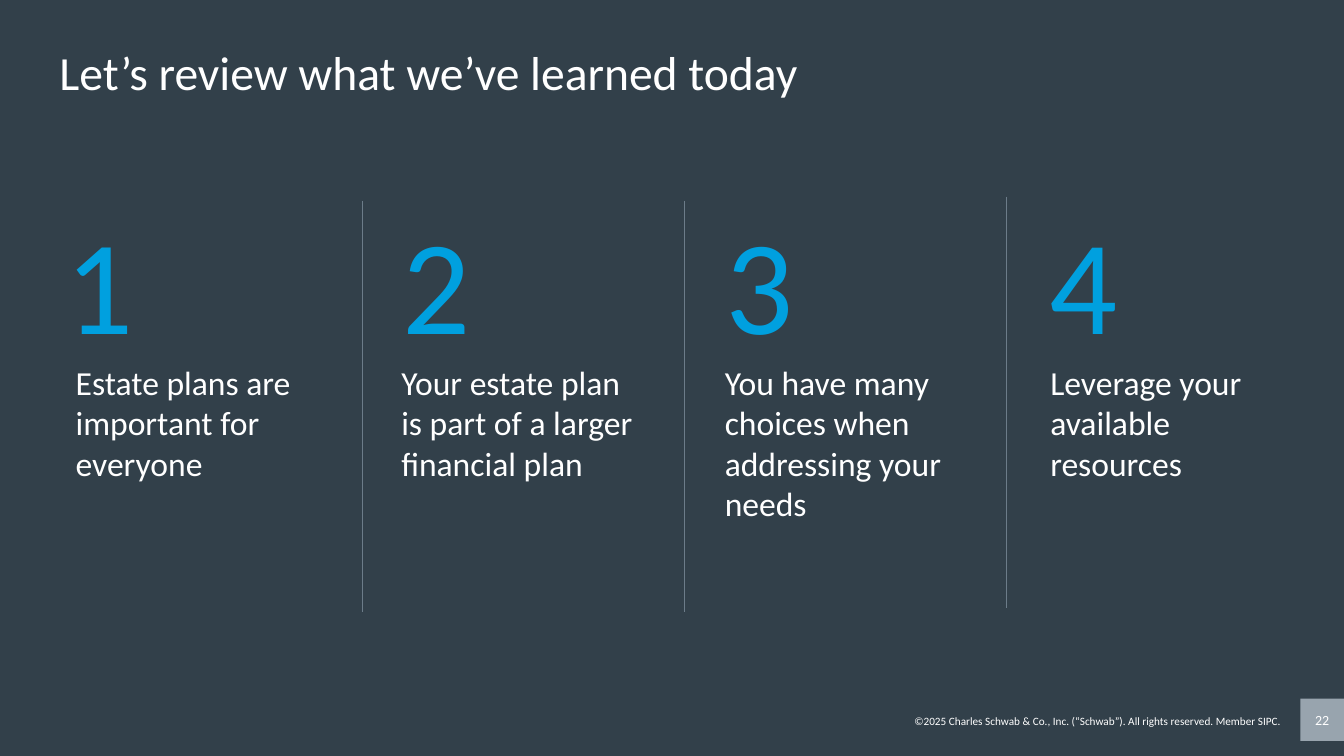
from dataclasses import dataclass

from lxml import etree
from pptx import Presentation
from pptx import util as u
from pptx.dml import color
from pptx.enum import shapes, text
from pptx.oxml import ns

Pt = u.Pt
ALIGN = text.PP_ALIGN


@dataclass(frozen=True)
class Theme:
    font: str = "Calibri"
    back: str = "32404A"
    white: str = "FFFFFF"
    blue: str = "00A0DF"
    rule: str = "6C7C89"
    tab: str = "98A4AE"
    title: int = 34
    digit: int = 96
    body: int = 24
    page: int = 10
    legal: int = 8


THEME = Theme()
POINTS = [
    (8.6, 54, "Estate plans are\vimportant for\veveryone"),
    (249.1, 286.6, "Your estate plan\vis part of a larger\vfinancial plan"),
    (479.5, 517.7, "You have many choices when addressing your needs"),
    (711.4, 750.2, "Leverage your\vavailable\vresources"),
]
RULES = [(258.5, 143.3), (488.9, 143.3), (718.6, 140.4)]


def rgb(code):
    return color.RGBColor.from_string(code)


def apply(item, values):
    for name, value in values.items():
        setattr(item, name, value)


def write(shape, words, size, tint=THEME.white, pad=(0, 0), mid=False, **style):
    frame = shape.text_frame
    apply(frame, {
        "word_wrap": True,
        "margin_left": Pt(pad[0]),
        "margin_right": Pt(pad[0]),
        "margin_top": Pt(pad[1]),
        "margin_bottom": Pt(pad[1]),
        "vertical_anchor": text.MSO_ANCHOR.MIDDLE if mid else text.MSO_ANCHOR.TOP,
    })
    para = frame.paragraphs[0]
    para.text = words
    apply(para, style)
    apply(para.font, {"name": THEME.font, "size": Pt(size)})
    para.font.color.rgb = rgb(tint)


def label(slide, box, words, size, **style):
    shape = slide.shapes.add_textbox(*map(Pt, box))
    write(shape, words, size, **style)


def rule(slide, left, top, height):
    line = slide.shapes.add_connector(
        shapes.MSO_CONNECTOR.STRAIGHT, Pt(left), Pt(top), Pt(left), Pt(top + height))
    line.line.color.rgb = rgb(THEME.rule)
    line.line.width = Pt(0.5)
    etree.SubElement(line._element.spPr, ns.qn("a:effectLst"))


def page(slide, box, words):
    shape = slide.shapes.add_shape(shapes.MSO_SHAPE.RECTANGLE, *map(Pt, box))
    shape.shadow.inherit = False
    shape.fill.solid()
    shape.fill.fore_color.rgb = rgb(THEME.tab)
    shape.line.fill.background()
    write(shape, words, THEME.page, mid=True, alignment=ALIGN.CENTER)


def main():
    deck = Presentation()
    apply(deck, {"slide_width": Pt(960), "slide_height": Pt(540)})
    slide = deck.slides.add_slide(deck.slide_layouts[6])
    slide.background.fill.solid()
    slide.background.fill.fore_color.rgb = rgb(THEME.back)

    label(slide, (42.5, 35.3, 874, 67), "Let’s review what we’ve learned today",
          THEME.title, line_spacing=0.9)
    for count, (left, edge, words) in enumerate(POINTS, 1):
        label(slide, (left, 143.3, 87.1, 64), str(count), THEME.digit,
              tint=THEME.blue, alignment=ALIGN.RIGHT)
        label(slide, (edge, 258.5, 179.3, 120), words, THEME.body)
    for left, top in RULES:
        rule(slide, left, top, 293.8)
    page(slide, (928.8, 499, 31.2, 30.2), "22")
    label(slide, (571, 506.9, 351.4, 26.6),
          "©2025 Charles Schwab & Co., Inc. (“Schwab”). All rights reserved. Member SIPC.",
          THEME.legal, pad=(7.2, 3.6), alignment=ALIGN.RIGHT)
    deck.save("out.pptx")


if __name__ == "__main__":
    main()
